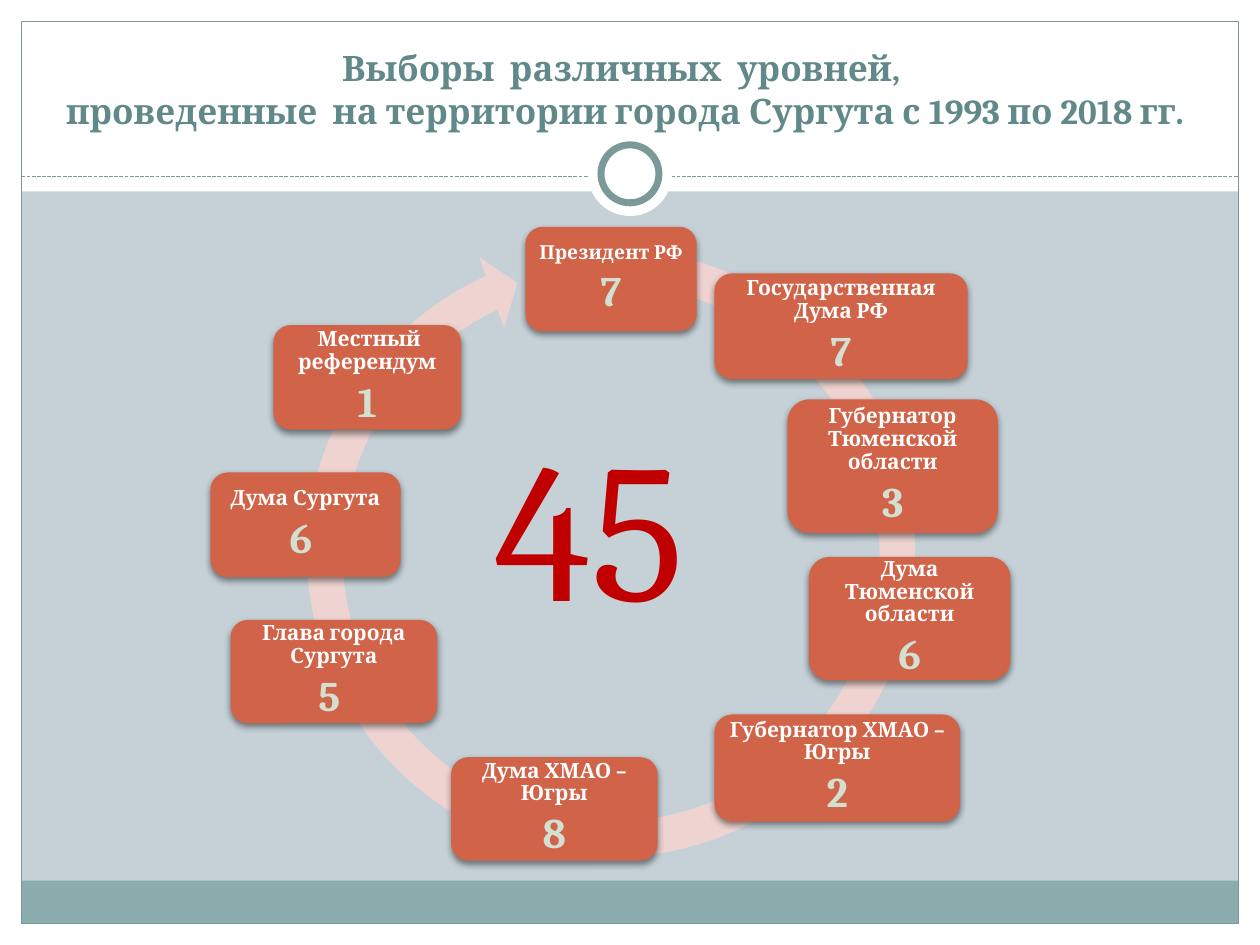
import pptx
import pptx.util
import pptx.dml.color
import pptx.enum.dml
import pptx.enum.shapes
import pptx.enum.text
import pptx.oxml
import pptx.oxml.ns

Inches, Pt = pptx.util.Inches, pptx.util.Pt
SHAPES = pptx.enum.shapes.MSO_SHAPE
ALIGN = pptx.enum.text.PP_ALIGN
ANCHOR = pptx.enum.text.MSO_ANCHOR

# Content
TITLE = ("Выборы  различных  уровней, \v"
         "проведенные  на территории города Сургута с 1993 по 2018 гг.")
TOTAL = "45"
# label, count, (left, top, width, height), label size
ELECTIONS = [
    ("Президент РФ", "7", (4.17, 1.80, 1.36, 0.83), 11),
    ("Государственная Дума РФ", "7", (5.67, 2.17, 2.01, 0.84), 12),
    ("Губернатор Тюменской области", "3", (6.25, 3.17, 1.67, 1.06), 12),
    ("Дума Тюменской области", "6", (6.42, 4.42, 1.60, 0.98), 12),
    ("Губернатор ХМАО – Югры", "2", (5.67, 5.67, 1.95, 0.85), 12),
    ("Дума ХМАО – Югры", "8", (3.58, 6.01, 1.64, 0.82), 12),
    ("Глава города Сургута", "5 ", (1.83, 4.92, 1.64, 0.82), 12),
    ("Дума Сургута", "6 ", (1.67, 3.75, 1.51, 0.83), 12),
    ("Местный референдум", "1", (2.17, 2.58, 1.49, 0.83), 12),
]
INDENTED_LABEL = "Местный референдум"  # starts with a small space

FONT = "Cambria"
COLORS = {
    "background": "C5D1D7", "white": "FFFFFF", "footer": "8CADAE",
    "frame": "7C999A", "title": "61898A", "title outline": "5B668F",
    "arrow": "EED3D0", "box": "D16349", "count": "D2DFD1", "total": "C00000",
}
WIDTH, HEIGHT = 10, 7.5
MARGIN = 0.17
HEADER = 1.52
RULE_Y = 1.4
FOOTER = 0.34


def rgb(name):
    return pptx.dml.color.RGBColor.from_string(COLORS[name])


def xml(text):
    return pptx.oxml.parse_xml(
        text.replace("/>", f" {pptx.oxml.ns.nsdecls('a')}/>", 1)
        if text.count("<") == 1
        else text.replace(">", f" {pptx.oxml.ns.nsdecls('a')}>", 1))


def add_shape(kind, box, fill=None, line=None, line_width=0.75):
    shape = slide.shapes.add_shape(kind, *map(Inches, box))
    shape.shadow.inherit = False
    if fill:
        shape.fill.solid()
        shape.fill.fore_color.rgb = rgb(fill)
    else:
        shape.fill.background()
    if line:
        shape.line.color.rgb = rgb(line)
        shape.line.width = Pt(line_width)
    else:
        shape.line.fill.background()
    return shape


def write(paragraph, text, size, color, bold=False, align=ALIGN.CENTER):
    """Append text to a paragraph; a vertical tab makes a line break."""
    paragraph.alignment = align
    runs = []
    for index, part in enumerate(text.split("\v")):
        if index:
            paragraph.add_line_break()
        run = paragraph.add_run()
        run.text = part
        run.font.name, run.font.size, run.font.bold = FONT, Pt(size), bold
        run.font.color.rgb = rgb(color)
        runs.append(run)
    return runs


def set_margins(frame, inches):
    frame.margin_left = frame.margin_right = Inches(inches)
    frame.margin_top = frame.margin_bottom = Inches(inches)


def add_election(label, count, box, size):
    shape = add_shape(SHAPES.ROUNDED_RECTANGLE, box, "box")
    effects = shape._element.spPr.find(pptx.oxml.ns.qn("a:effectLst"))
    effects.append(xml(
        f'<a:outerShdw blurRad="{Pt(4)}" dist="{Pt(2)}" dir="5400000" '
        'rotWithShape="0"><a:srgbClr val="000000"><a:alpha val="45000"/>'
        '</a:srgbClr></a:outerShdw>'))
    frame = shape.text_frame
    frame.word_wrap = True
    frame.vertical_anchor = ANCHOR.MIDDLE
    set_margins(frame, 0.05)
    label_line, count_line = frame.paragraphs[0], frame.add_paragraph()
    if label == INDENTED_LABEL:
        set_margins(frame, 0.04)
        write(label_line, " ", 10, "white", bold=True)
    write(label_line, label, size, "white", bold=True)
    write(count_line, count, 24, "count", bold=True)
    for paragraph in frame.paragraphs:
        paragraph.line_spacing = 0.9
        paragraph._p.get_or_add_pPr().append(
            xml('<a:spcAft><a:spcPct val="35000"/></a:spcAft>'))


presentation = pptx.Presentation()
presentation.slide_width, presentation.slide_height = Inches(WIDTH), Inches(HEIGHT)
slide = presentation.slides.add_slide(presentation.slide_layouts[5])
slide.background.fill.solid()
slide.background.fill.fore_color.rgb = rgb("background")

# White margins, footer band and frame
inner_width, inner_height = WIDTH - 2 * MARGIN, HEIGHT - 2 * MARGIN
for band in [(0, HEIGHT - MARGIN, WIDTH, MARGIN), (0, 0, WIDTH, HEADER),
             (0, 0, MARGIN, HEIGHT), (WIDTH - MARGIN, 0, MARGIN, HEIGHT)]:
    add_shape(SHAPES.RECTANGLE, band, "white")
add_shape(SHAPES.RECTANGLE,
          (MARGIN, HEIGHT - MARGIN - FOOTER, inner_width, FOOTER), "footer")
add_shape(SHAPES.RECTANGLE, (MARGIN, MARGIN, inner_width, inner_height), line="frame")

# Dashed rule with a ring at its middle
rule = slide.shapes.add_connector(
    pptx.enum.shapes.MSO_CONNECTOR.STRAIGHT,
    *map(Inches, (MARGIN, RULE_Y, WIDTH - MARGIN, RULE_Y)))
rule.line.color.rgb = rgb("frame")
rule.line.width = Pt(0.75)
rule.line.dash_style = pptx.enum.dml.MSO_LINE.SQUARE_DOT
rule._element.spPr.append(xml("<a:effectLst/>"))
for diameter, line in [(0.67, None), (0.46, "frame")]:
    add_shape(SHAPES.OVAL, (WIDTH / 2 - diameter / 2, 1.38 - diameter / 2,
                            diameter, diameter), "white", line, 4)

# Title, brought in front of the header band
title = slide.shapes.title
slide.shapes._spTree.append(title._element)
title.left, title.top = Inches(MARGIN), Inches(MARGIN)
title.width, title.height = Inches(9.58), Inches(0.92)
title.text_frame.word_wrap = True
title.text_frame.auto_size = pptx.enum.text.MSO_AUTO_SIZE.NONE
title.text_frame.vertical_anchor = ANCHOR.BOTTOM
for run in write(title.text_frame.paragraphs[0], TITLE, 20, "title", bold=True):
    run.font._element.insert(0, xml(
        f'<a:ln w="{Pt(1)}"><a:solidFill><a:srgbClr '
        f'val="{COLORS["title outline"]}"/></a:solidFill></a:ln>'))

# Circular arrow with the elections around it
arrow = add_shape(SHAPES.CIRCULAR_ARROW, (2.28, 1.82, 5.14, 5.14), "arrow")
for index, value in enumerate([0.055, 3.307, 147.222, 168.33, 0.058]):
    arrow.adjustments[index] = value
for election in ELECTIONS:
    add_election(*election)

# Total in the middle
total = slide.shapes.add_textbox(*map(Inches, (3.83, 3.17, 2.25, 1.99)))
total.text_frame.word_wrap = True
write(total.text_frame.paragraphs[0], TOTAL, 112, "total", align=ALIGN.LEFT)

presentation.save("out.pptx")
